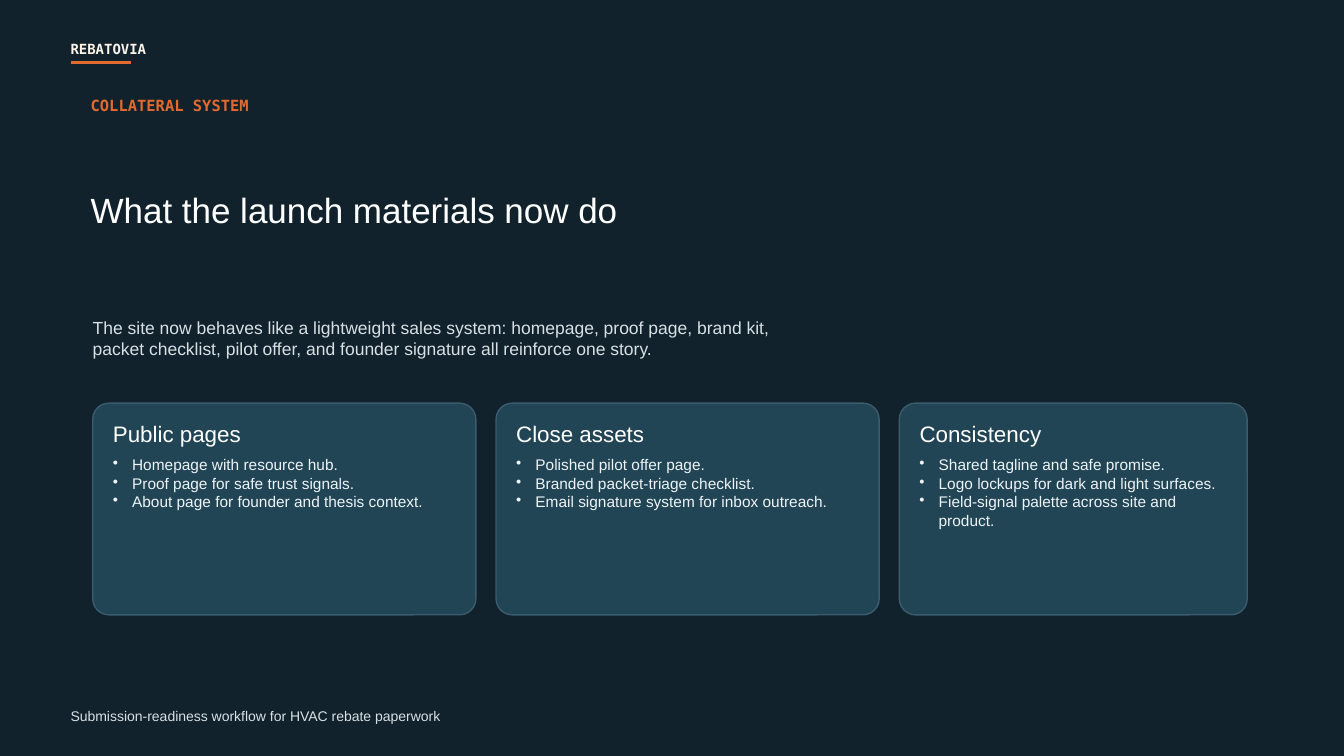
from lxml import etree
from pptx import Presentation
from pptx.dml.color import RGBColor
from pptx.enum.shapes import MSO_CONNECTOR, MSO_SHAPE
from pptx.enum.text import MSO_ANCHOR, MSO_AUTO_SIZE, PP_ALIGN
from pptx.oxml.ns import qn
from pptx.util import Inches, Pt

ROUNDED = MSO_SHAPE.ROUNDED_RECTANGLE
STRAIGHT = MSO_CONNECTOR.STRAIGHT
TOP, MIDDLE = MSO_ANCHOR.TOP, MSO_ANCHOR.MIDDLE
LEFT = PP_ALIGN.LEFT
NO_AUTOFIT = MSO_AUTO_SIZE.NONE

SANS, MONO = "Arial", "DejaVu Sans Mono"
COLORS = {
    "night": "11222C", "orange": "E36A2F", "cream": "FBF3E8",
    "white": "FFFFFF", "mist": "D8E0E4", "ice": "EDF3F6",
    "card": "214555", "border": "3A5C6E",
}

BRAND = "REBATOVIA"
FOOTER = "Submission-readiness workflow for HVAC rebate paperwork"
SECTION = "COLLATERAL SYSTEM"
TITLE = "What the launch materials now do"
INTRO = ("The site now behaves like a lightweight sales system: homepage, "
         "proof page, brand kit, packet checklist, pilot offer, and founder "
         "signature all reinforce one story.")
CARDS = [  # heading, width, bullets
    ("Public pages", 3.8, [
        "Homepage with resource hub.",
        "Proof page for safe trust signals.",
        "About page for founder and thesis context."]),
    ("Close assets", 3.8, [
        "Polished pilot offer page.",
        "Branded packet-triage checklist.",
        "Email signature system for inbox outreach."]),
    ("Consistency", 3.45, [
        "Shared tagline and safe promise.",
        "Logo lockups for dark and light surfaces.",
        "Field-signal palette across site and product."]),
]
CARD_LEFT, CARD_TOP, CARD_HEIGHT = 0.92, 4, 2.1
CARD_GAP = CARD_PAD = 0.2
CORNER = 0.16
INDENT = 0.19


def rgb(name):
    return RGBColor.from_string(COLORS[name])


def add_bullet(p):
    pPr = p._p.get_or_add_pPr()
    pPr.set("marL", str(Inches(INDENT)))
    pPr.set("indent", str(-Inches(INDENT)))
    etree.SubElement(pPr, qn("a:buChar")).set("char", "•")


def put_text(slide, text, box, size, color, font=SANS, bold=False,
             anchor=MIDDLE, bullets=False, sp=None):
    """Write a string or a list of paragraphs into sp, or a new text box."""
    left, top, width, height = map(Inches, box)
    if sp is None:
        sp = slide.shapes.add_textbox(left, top, width, height)
    else:
        sp.left, sp.top, sp.width, sp.height = left, top, width, height
    tf = sp.text_frame
    tf.word_wrap = True
    tf.auto_size = NO_AUTOFIT
    tf.vertical_anchor = anchor
    tf.margin_left = tf.margin_top = tf.margin_right = tf.margin_bottom = 0
    lines = [text] if isinstance(text, str) else text
    for i, line in enumerate(lines):
        p = tf.add_paragraph() if i else tf.paragraphs[0]
        p.alignment = LEFT
        if bullets:
            add_bullet(p)
        r = p.add_run()
        r.text = line
        r.font.name, r.font.size, r.font.bold = font, Pt(size), bold
        r.font.color.rgb = rgb(color)


def add_card(slide, left, width, heading, points):
    sp = slide.shapes.add_shape(ROUNDED, Inches(left), Inches(CARD_TOP),
                                Inches(width), Inches(CARD_HEIGHT))
    sp.shadow.inherit = False
    sp.adjustments[0] = CORNER / CARD_HEIGHT
    sp.fill.solid()
    sp.fill.fore_color.rgb = rgb("card")
    sp.line.color.rgb = rgb("border")
    sp.line.width = Pt(1)
    text_left, text_width = left + CARD_PAD, width - 2 * CARD_PAD
    put_text(slide, heading, (text_left, CARD_TOP + 0.16, text_width, 0.28),
             16, "white")
    put_text(slide, points, (text_left, CARD_TOP + 0.52, text_width - 0.05, 1.4),
             11, "ice", anchor=TOP, bullets=True)


def add_rule(slide, x1, x2, y):
    line = slide.shapes.add_connector(STRAIGHT, Inches(x1), Inches(y),
                                      Inches(x2), Inches(y))
    line.line.color.rgb = rgb("orange")
    line.line.width = Pt(2.5)
    etree.SubElement(line._element.spPr, qn("a:effectLst"))


def main():
    prs = Presentation()
    prs.slide_width, prs.slide_height = Inches(13.33), Inches(7.5)
    slide = prs.slides.add_slide(prs.slide_layouts[5])
    slide.background.fill.solid()
    slide.background.fill.fore_color.rgb = rgb("night")

    add_rule(slide, 0.7, 1.3, 0.62)
    put_text(slide, BRAND, (0.7, 0.36, 2.2, 0.25), 10, "cream",
             font=MONO, bold=True)
    put_text(slide, FOOTER, (0.7, 7, 4.8, 0.2), 10, "mist")
    put_text(slide, SECTION, (0.9, 0.95, 4, 0.2), 11, "orange",
             font=MONO, bold=True)
    put_text(slide, TITLE, (0.9, 1.28, 7.4, 1.6), 25, "white",
             sp=slide.shapes.title)
    put_text(slide, INTRO, (0.92, 2.95, 6.8, 0.8), 12.5, "mist")

    left = CARD_LEFT
    for heading, width, points in CARDS:
        add_card(slide, left, width, heading, points)
        left += width + CARD_GAP
    prs.save("out.pptx")


if __name__ == "__main__":
    main()
